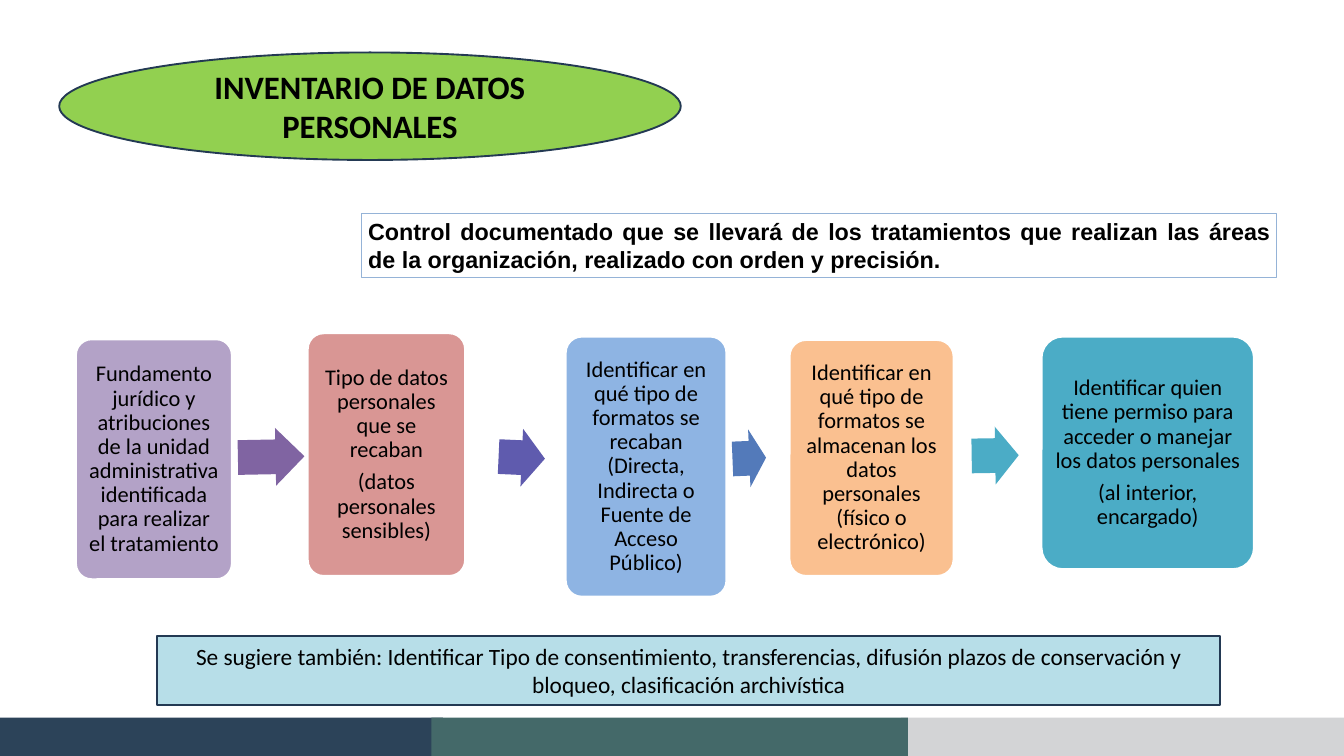
import pptx
import pptx.dml.color
import pptx.enum.shapes
import pptx.enum.text
import pptx.util

Pt = pptx.util.Pt
SHAPES = pptx.enum.shapes.MSO_SHAPE
ALIGN = pptx.enum.text.PP_ALIGN

COLORS = {
    "navy": "2C4359", "green": "446969", "gray": "D3D4D6",
    "lime": "92D050", "pale_blue": "B7DEE8", "outline": "233953",
    "light_outline": "95B3D7", "white": "FFFFFF", "black": "000000",
    "lilac": "B3A2C7", "rose": "D99694", "sky": "8EB4E3",
    "peach": "FAC090", "teal": "4BACC6",
    "purple": "8064A2", "indigo": "5F5BAE", "blue": "537ABA",
}

BANDS = [
    (0, 474.5, "navy"),
    (965.5, 474.5, "gray"),
    (462.2, 510.5, "green"),
]

STEPS = [
    ((81.4, 363.6, 167, 257), "lilac",
     ["Fundamento jurídico y atribuciones de la unidad administrativa "
      "identificada para realizar el tratamiento"]),
    ((329.8, 357.1, 168.5, 259.9), "rose",
     ["Tipo de datos personales que se recaban",
      "(datos personales sensibles)"]),
    ((606.2, 360.7, 172.1, 278.6), "sky",
     ["Identificar en qué tipo de formatos se recaban (Directa, "
      "Indirecta o Fuente de Acceso Público)"]),
    ((846, 364.3, 175.7, 252.7), "peach",
     ["Identificar en qué tipo de formatos se almacenan los datos "
      "personales (físico o electrónico)"]),
    ((1116, 360.7, 227.5, 249.1), "teal",
     ["Identificar quien tiene permiso para acceder o manejar los datos "
      "personales",
      "(al interior, encargado)"]),
]

ARROWS = [
    (254.9, 458.6, 71.3, -1.1, "purple"),
    (534.2, 459.4, 49.7, 2.6, "indigo"),
    (784.8, 460.1, 36, -2.3, "blue"),
    (1041.1, 457.2, 50.4, -0.9, "teal"),
]


def color(name):
    return pptx.dml.color.RGBColor.from_string(COLORS[name])


def add_shape(slide, kind, box, fill=None, line=None, width=2):
    shape = slide.shapes.add_shape(kind, *[Pt(length) for length in box])
    shape.shadow.inherit = False
    if fill:
        shape.fill.solid()
        shape.fill.fore_color.rgb = color(fill)
    else:
        shape.fill.background()
    if line:
        shape.line.color.rgb = color(line)
        shape.line.width = Pt(width)
    else:
        shape.line.fill.background()
    return shape


def write_text(shape, paragraphs, size=24, font="Calibri", bold=False,
               align=ALIGN.CENTER, line_spacing=1.0, space_after=0):
    frame = shape.text_frame
    frame.word_wrap = True
    frame.vertical_anchor = pptx.enum.text.MSO_ANCHOR.MIDDLE
    frame.text = "\n".join(paragraphs)
    for paragraph in frame.paragraphs:
        paragraph.alignment = align
        paragraph.line_spacing = line_spacing
        paragraph.space_after = Pt(space_after)
        for run in paragraph.runs:
            run.font.size = Pt(size)
            run.font.name = font
            run.font.bold = bold
            run.font.color.rgb = color("black")


def add_band(slide, left, width, fill):
    add_shape(slide, SHAPES.RECTANGLE, (left, 769, width, 41), fill)


def add_step(slide, box, fill, paragraphs):
    card = add_shape(slide, SHAPES.ROUNDED_RECTANGLE, box, fill, "white")
    card.adjustments[0] = 0.1
    frame = card.text_frame
    frame.margin_left = frame.margin_right = Pt(7.2)
    frame.margin_top = frame.margin_bottom = Pt(7.2)
    write_text(card, paragraphs, line_spacing=0.9, space_after=8.4)


def add_arrow(slide, left, top, width, rotation, fill):
    arrow = add_shape(slide, SHAPES.RIGHT_ARROW, (left, top, width, 61.9), fill)
    arrow.adjustments[0] = 0.6
    arrow.adjustments[1] = 0.5
    arrow.rotation = rotation


def main():
    presentation = pptx.Presentation()
    presentation.slide_width = Pt(1440)
    presentation.slide_height = Pt(810)
    slide = presentation.slides.add_slide(presentation.slide_layouts[6])

    for band in BANDS:
        add_band(slide, *band)
    for step in STEPS:
        add_step(slide, *step)
    for arrow in ARROWS:
        add_arrow(slide, *arrow)

    definition = add_shape(slide, SHAPES.RECTANGLE, (387.4, 229, 980.6, 67.7),
                           line="light_outline", width=0.75)
    write_text(definition,
               ["Control documentado que se llevará de los tratamientos que "
                "realizan las áreas de la organización, realizado con orden "
                "y precisión."],
               size=25, font="Arial", bold=True, align=ALIGN.JUSTIFY)

    title = add_shape(slide, SHAPES.OVAL, (63.4, 56.2, 666, 115.2),
                      "lime", "outline")
    write_text(title, ["INVENTARIO DE DATOS PERSONALES"], size=35, bold=True)

    suggestion = add_shape(slide, SHAPES.RECTANGLE,
                           (167.8, 681.1, 1139.8, 74.2),
                           "pale_blue", "outline")
    write_text(suggestion,
               ["Se sugiere también: Identificar Tipo de consentimiento, "
                "transferencias, difusión plazos de conservación y bloqueo, "
                "clasificación archivística"], size=25)

    presentation.save("out.pptx")


if __name__ == "__main__":
    main()
